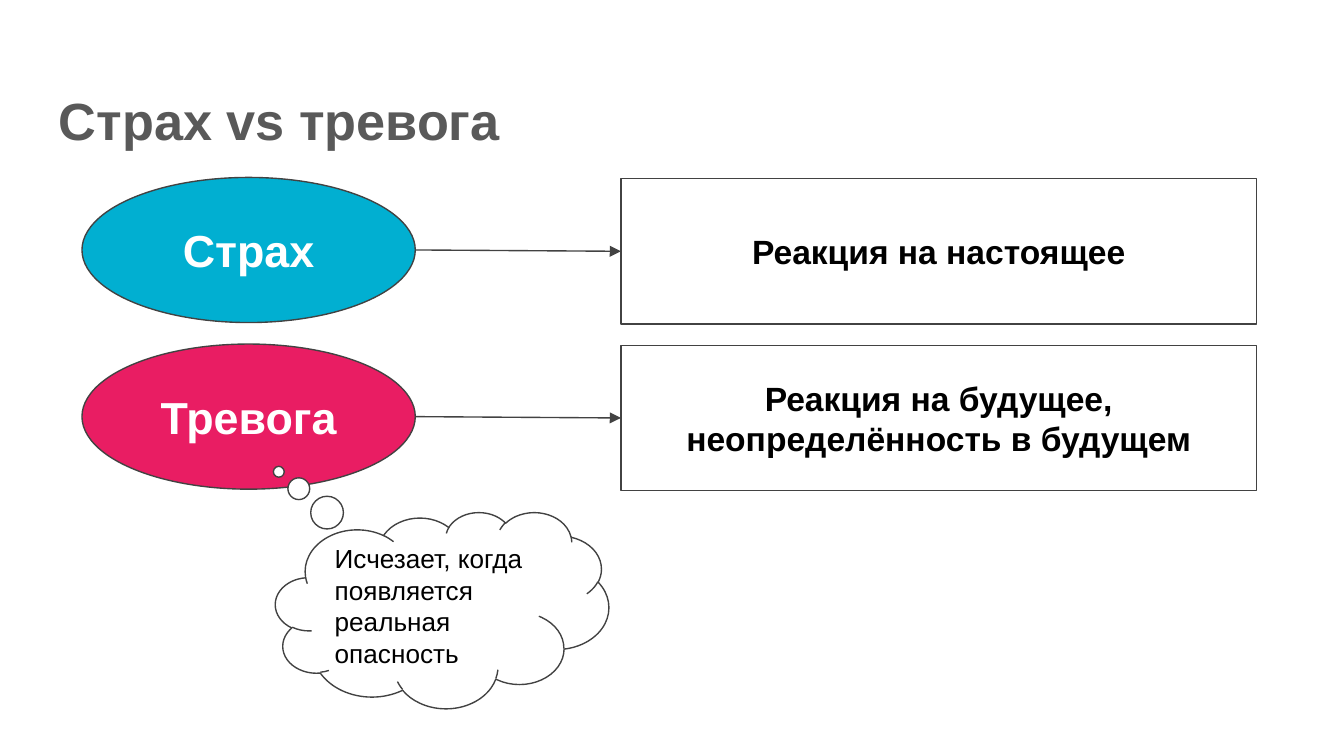
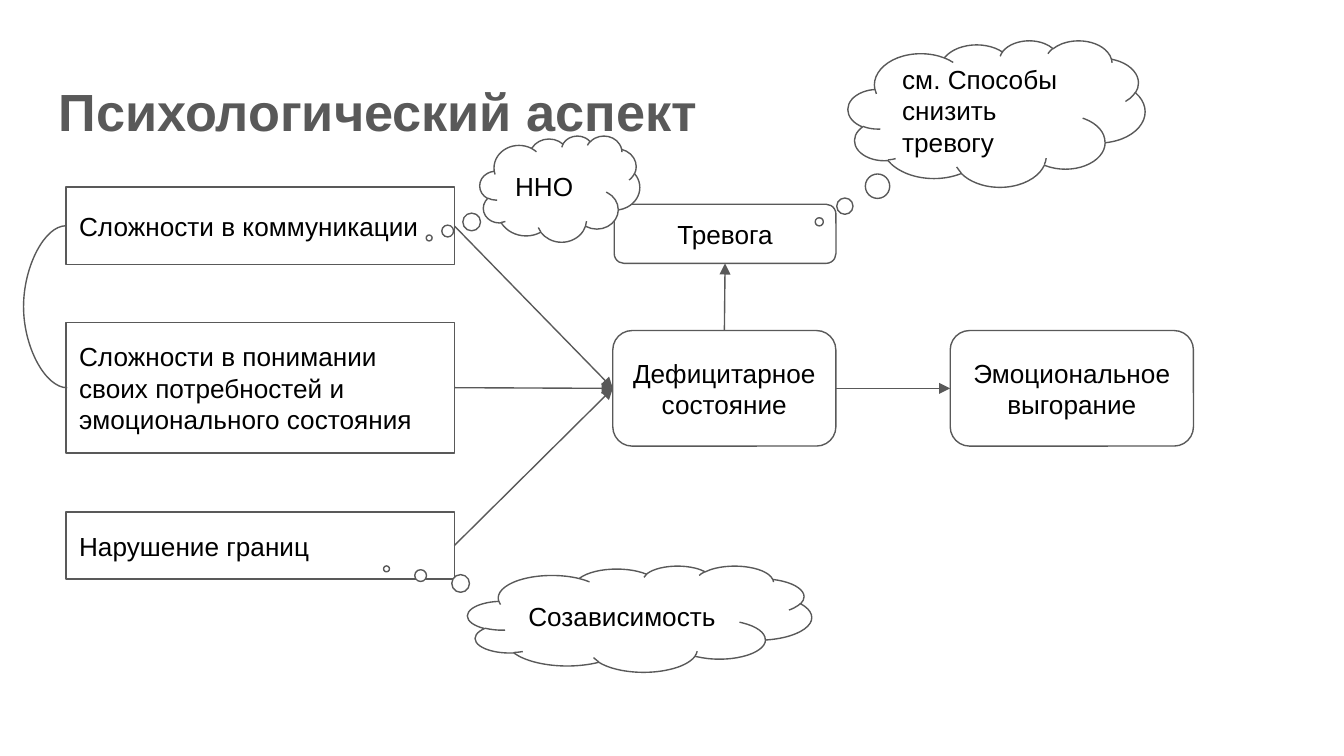
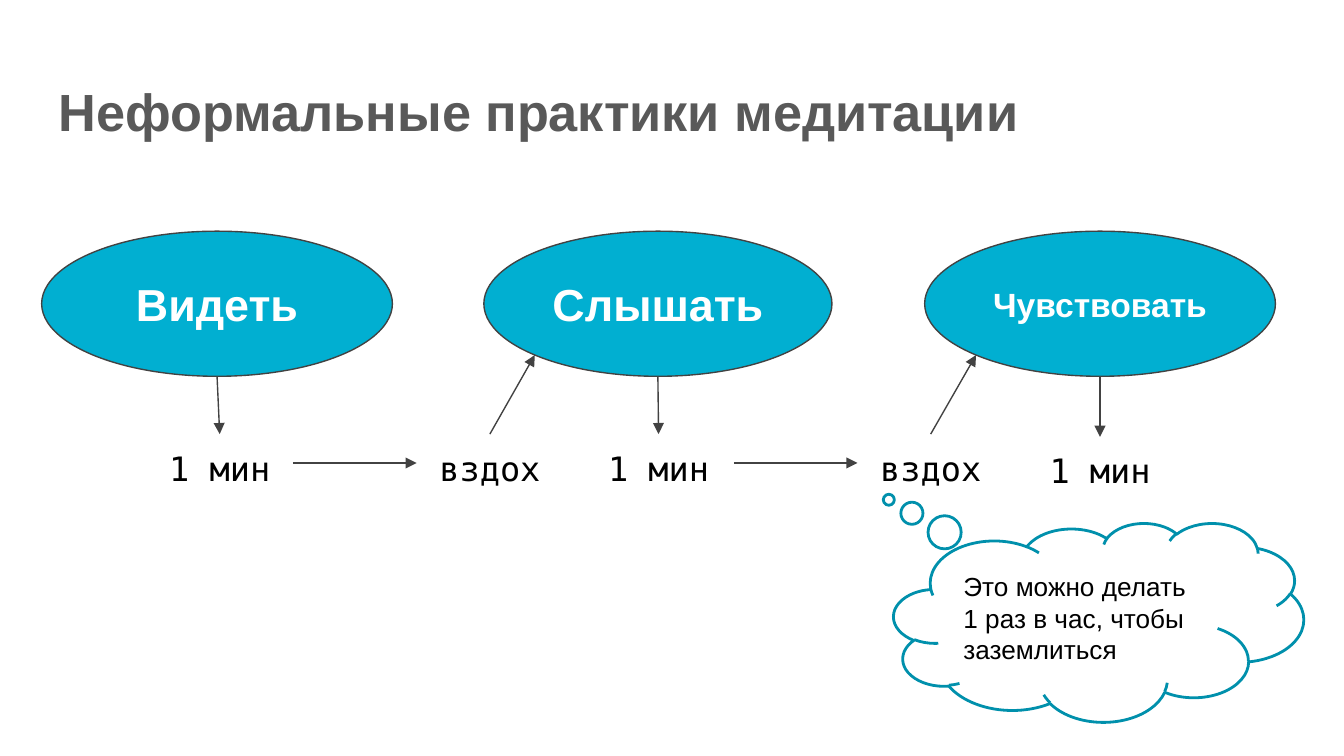
from math import sqrt

from lxml import etree
from pptx import Presentation
from pptx.dml.color import RGBColor
from pptx.enum.shapes import MSO_CONNECTOR, MSO_SHAPE
from pptx.enum.text import MSO_ANCHOR, PP_ALIGN
from pptx.oxml.ns import qn
from pptx.util import Inches, Pt

RECT, ROUND = MSO_SHAPE.RECTANGLE, MSO_SHAPE.ROUNDED_RECTANGLE
OVAL, NODE = MSO_SHAPE.OVAL, MSO_SHAPE.FLOWCHART_CONNECTOR
CLOUD = MSO_SHAPE.CLOUD_CALLOUT
STRAIGHT, CURVE = MSO_CONNECTOR.STRAIGHT, MSO_CONNECTOR.CURVE
TOP, MIDDLE = MSO_ANCHOR.TOP, MSO_ANCHOR.MIDDLE
LEFT, CENTER = PP_ALIGN.LEFT, PP_ALIGN.CENTER

COLORS = {
    "title": "595959", "dark": "424242", "gray": "595959", "black": "000000",
    "white": "FFFFFF", "cyan": "01AFD1", "pink": "E91D63", "teal": "0090AC",
}
SANS, MONO = "Arial", "DejaVu Sans Mono"
TITLE_BOX = (0.34, 0.49, 9.32, 0.63)

# Slide 1: feeling, its colour, top of oval, top of box, meaning
FEELINGS = [
    ("Страх", "cyan", 1.32, 1.33, "Реакция на настоящее"),
    ("Тревога", "pink", 2.56, 2.57,
     "Реакция на будущее, неопределённость в будущем"),
]
FEAR_CLOUD = ("Исчезает, когда появляется реальная опасность",
              (2.05, 3.81, 2.48, 1.46), (-0.49, -0.705))

# Slide 2: causes (text, top, height), states (text, box), clouds
CAUSES = [
    ("Сложности в коммуникации", 1.39, 0.58),
    ("Сложности в понимании своих потребностей и эмоционального состояния",
     2.4, 0.97),
    ("Нарушение границ", 3.81, 0.5),
]
DEFICIT = ("Дефицитарное состояние", (4.56, 2.46, 1.66, 0.86))
BURNOUT = ("Эмоциональное выгорание", (7.07, 2.46, 1.81, 0.86))
ANXIETY = ("Тревога", (4.57, 1.52, 1.65, 0.44))
ASPECT_CLOUDS = [
    ("см. Способы снизить тревогу", (6.31, 0.3, 2.21, 1.09), (-0.597, 0.739)),
    ("ННО", (3.57, 1.01, 1.19, 0.79), (-0.817, 0.463)),
    ("Созависимость", (3.48, 4.21, 2.56, 0.79), (-0.736, -0.471)),
]

# Slide 3: sense, text size, oval left and width, minute box
SENSES = [
    ("Видеть", 24, 0.31, 2.61, (1.09, 3.23, 1.09, 0.43)),
    ("Слышать", 24, 3.6, 2.59, (4.34, 3.23, 1.12, 0.43)),
    ("Чувствовать", 18, 6.88, 2.61, (7.64, 3.25, 1.09, 0.43)),
]
BREATHS = [(3.1, 3.23, 1.09, 0.43), (6.38, 3.23, 1.09, 0.43)]
PRACTICE_CLOUD = ("Это можно делать 1 раз в час, чтобы заземлиться",
                  (6.65, 3.89, 3.05, 1.48), (-0.512, -0.616))


def rgb(name):
    return RGBColor.from_string(COLORS[name])


def side(box, across, down):
    """Point of a box at the given shares of its width and height."""
    left, top, width, height = box
    return left + across * width, top + down * height


def right(box):
    return side(box, 1, 0.5)


def left(box):
    return side(box, 0, 0.5)


def top(box):
    return side(box, 0.5, 0)


def bottom(box):
    return side(box, 0.5, 1)


def write(shape, text, size, color="black", bold=False, align=LEFT,
          anchor=MIDDLE, font=SANS, spacing=None):
    frame = shape.text_frame
    frame.word_wrap = True
    frame.vertical_anchor = anchor
    frame.margin_left = frame.margin_right = Inches(0.1)
    frame.margin_top = frame.margin_bottom = Inches(0.1)
    paragraph = frame.paragraphs[0]
    paragraph.text = text
    paragraph.alignment = align
    if spacing:
        paragraph.line_spacing = spacing
    paragraph.font.name = font
    paragraph.font.size = Pt(size)
    paragraph.font.bold = bold
    paragraph.font.color.rgb = rgb(color)


def add_text(slide, box, text, size, **style):
    shape = slide.shapes.add_textbox(*map(Inches, box))
    write(shape, text, size, anchor=TOP, **style)


def add_figure(slide, kind, box, text, size, fill=None, line="dark",
               weight=0.75, **style):
    shape = slide.shapes.add_shape(kind, *map(Inches, box))
    shape.shadow.inherit = False
    if fill:
        shape.fill.solid()
        shape.fill.fore_color.rgb = rgb(fill)
    else:
        shape.fill.background()
    shape.line.color.rgb = rgb(line)
    shape.line.width = Pt(weight)
    write(shape, text, size, **style)
    return shape


def add_cloud(slide, text, box, pointer, line="dark", weight=0.75):
    cloud = add_figure(slide, CLOUD, box, text, 14, "white", line, weight)
    cloud.adjustments[0], cloud.adjustments[1] = pointer


def add_line(slide, start, end, color="dark", kind=STRAIGHT, arrow=True):
    connector = slide.shapes.add_connector(kind, *map(Inches, start + end))
    connector.line.color.rgb = rgb(color)
    connector.line.width = Pt(0.75)
    properties = connector.element.spPr
    if arrow:
        etree.SubElement(properties.find(qn("a:ln")), qn("a:tailEnd"),
                         type="triangle")
    etree.SubElement(properties, qn("a:effectLst"))
    return connector


def add_slide(presentation, title, spacing=None):
    slide = presentation.slides.add_slide(presentation.slide_layouts[6])
    add_text(slide, TITLE_BOX, title, 28, color="title", bold=True,
             spacing=spacing)
    return slide


def build_fear(presentation):
    slide = add_slide(presentation, "Страх vs тревога", spacing=1.15)
    for feeling, color, oval_top, box_top, meaning in FEELINGS:
        oval = (0.61, oval_top, 2.48, 1.08)
        box = (4.62, box_top, 4.73, 1.08)
        add_figure(slide, OVAL, oval, feeling, 24, color, color="white",
                   bold=True, align=CENTER)
        add_figure(slide, RECT, box, meaning, 18, "white", bold=True,
                   align=CENTER)
        add_line(slide, right(oval), left(box))
    add_cloud(slide, *FEAR_CLOUD)


def build_aspect(presentation):
    slide = add_slide(presentation, "Психологический аспект")
    for text, box in (DEFICIT, BURNOUT, ANXIETY):
        add_figure(slide, ROUND, box, text, 14, line="gray", align=CENTER)
    deficit, burnout, anxiety = DEFICIT[1], BURNOUT[1], ANXIETY[1]

    cause_boxes = [(0.49, y, 2.89, height) for _, y, height in CAUSES]
    for (text, _, _), box in zip(CAUSES, cause_boxes):
        add_figure(slide, RECT, box, text, 14, line="gray")
        add_line(slide, right(box), left(deficit), "gray")
    add_line(slide, right(deficit), left(burnout), "gray")
    add_line(slide, top(deficit), bottom(anxiety), "gray")

    # Arc bulging to the left between the first two causes
    x, start_y = left(cause_boxes[0])
    end_y = left(cause_boxes[1])[1]
    span, bulge = 0.01, 0.32
    arc = add_line(slide, (x, start_y), (x + span, end_y), "gray", CURVE,
                   arrow=False)
    guides = arc.element.spPr.find(qn("a:prstGeom")).get_or_add_avLst()
    etree.SubElement(guides, qn("a:gd"), name="adj1",
                     fmla=f"val {round(-bulge / span * 100000)}")

    for cloud in ASPECT_CLOUDS:
        add_cloud(slide, *cloud, line="gray")


def build_practice(presentation):
    slide = add_slide(presentation, "Неформальные практики медитации")
    ovals = [(x, 1.72, width, 1.08) for _, _, x, width, _ in SENSES]
    minutes = [sense[-1] for sense in SENSES]
    for (text, size, *_), oval, minute in zip(SENSES, ovals, minutes):
        add_figure(slide, NODE, oval, text, size, "cyan", color="white",
                   bold=True, align=CENTER)
        add_text(slide, minute, "1 мин", 18, align=CENTER, font=MONO)
        add_line(slide, bottom(oval), top(minute))

    # Each breath leads from one minute to the lower left of the next oval
    diagonal = sqrt(0.5) / 2
    for minute, breath, oval in zip(minutes, BREATHS, ovals[1:]):
        add_text(slide, breath, "вздох", 18, align=CENTER, font=MONO)
        add_line(slide, right(minute), left(breath))
        add_line(slide, top(breath), side(oval, 0.5 - diagonal, 0.5 + diagonal))
    add_cloud(slide, *PRACTICE_CLOUD, line="teal", weight=1.5)


def main():
    presentation = Presentation()
    # Widescreen, 16:9
    presentation.slide_width = Inches(10)
    presentation.slide_height = presentation.slide_width * 9 // 16
    build_fear(presentation)
    build_aspect(presentation)
    build_practice(presentation)
    presentation.save("out.pptx")


if __name__ == "__main__":
    main()
